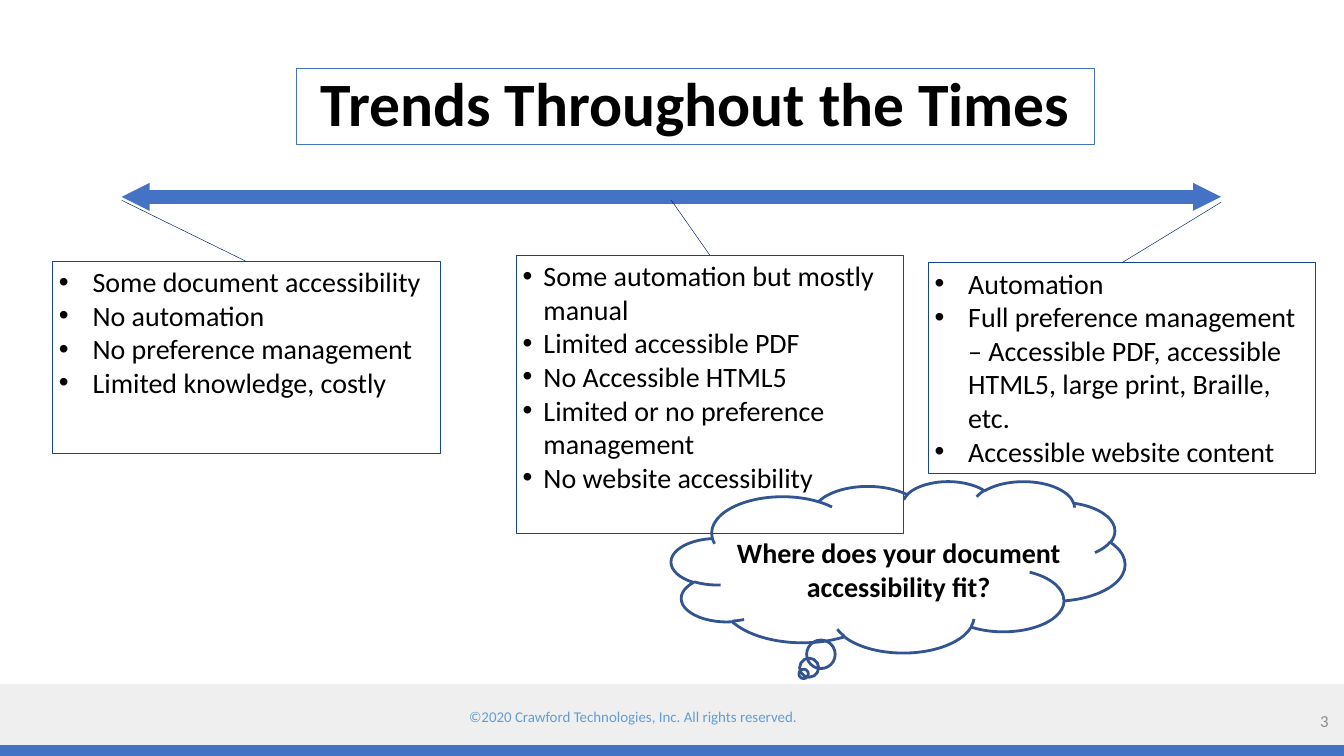
import pptx
import pptx.util
import pptx.dml.color
import pptx.enum.shapes
import pptx.enum.text
import pptx.oxml.ns
import lxml.etree

SHAPE = pptx.enum.shapes.MSO_SHAPE
ALIGN = pptx.enum.text.PP_ALIGN
ANCHOR = pptx.enum.text.MSO_ANCHOR
STRAIGHT = pptx.enum.shapes.MSO_CONNECTOR.STRAIGHT
qn = pptx.oxml.ns.qn


def color(hex_code):
    return pptx.dml.color.RGBColor.from_string(hex_code)


def write(paragraph, words, size, hex_code="000000", bold=False, align=None):
    paragraph.alignment = align
    run = paragraph.add_run()
    run.text = words
    run.font.name = "Calibri"
    run.font.size = pptx.util.Pt(size)
    run.font.bold = bold
    run.font.color.rgb = color(hex_code)


deck = pptx.Presentation()
deck.slide_width = pptx.util.Inches(20)
deck.slide_height = pptx.util.Inches(11.25)
slide = deck.slides.add_slide(deck.slide_layouts[5])

# Lengths are percentages of the slide's width (col) and height (row)
col = deck.slide_width / 100
row = deck.slide_height / 100

# Footer band and blue strip
for top, fill, alpha in [(90.49, "D9D9D9", 40), (98.58, "4472C4", 100)]:
    band = slide.shapes.add_shape(SHAPE.RECTANGLE, 0, int(top * row),
                                  deck.slide_width, int((100 - top) * row))
    band.shadow.inherit = False
    band.fill.solid()
    band.fill.fore_color.rgb = color(fill)
    band.line.fill.background()
    if alpha < 100:
        tint = band.fill._xPr.find(qn("a:solidFill"))[0]
        lxml.etree.SubElement(tint, qn("a:alpha")).set("val", str(alpha * 1000))

# Copyright line and page number
copyright_line = slide.shapes.add_textbox(int(29.8 * col), int(93.6 * row),
                                          int(34.6 * col), int(2.84 * row))
copyright_line.text_frame.word_wrap = True
copyright_line.text_frame.paragraphs[0].line_spacing = 0.8
write(copyright_line.text_frame.paragraphs[0],
      "©2020 Crawford Technologies, Inc. All rights reserved.",
      16, "629DD1", align=ALIGN.CENTER)

page_number = slide.shapes.add_textbox(int(96.5 * col), int(92.71 * row),
                                       int(3.1 * col), int(5.33 * row))
page_number.text_frame.word_wrap = True
page_number.text_frame.vertical_anchor = ANCHOR.MIDDLE
page_number.text_frame.margin_left = pptx.util.Inches(0.15)
page_number.text_frame.margin_right = pptx.util.Inches(0.15)
write(page_number.text_frame.paragraphs[0], "3", 18, "8C8C8C", align=ALIGN.RIGHT)

# Title
title = slide.shapes.title
title.left, title.top = int(22.05 * col), int(8.98 * row)
title.width, title.height = int(59.4 * col), int(10.13 * row)
title.line.color.rgb = color("4472C4")
title.line.width = pptx.util.Pt(0.75)
title.text_frame.auto_size = pptx.enum.text.MSO_AUTO_SIZE.NONE
title.text_frame.vertical_anchor = ANCHOR.MIDDLE
title.text_frame.paragraphs[0].line_spacing = 0.9
write(title.text_frame.paragraphs[0], "Trends Throughout the Times",
      66, bold=True, align=ALIGN.CENTER)

# Eras: left, top, height, bullet indent in inches, points
era_width = 28.85
eras = [
    (3.9, 34.58, 25.42, 0.5, [
        "Some document accessibility", "No automation",
        "No preference management", "Limited knowledge, costly"]),
    (38.4, 33.78, 36.8, 0.31, [
        "Some automation but mostly manual", "Limited accessible PDF",
        "No Accessible HTML5", "Limited or no preference management",
        "No website accessibility"]),
    (69.05, 34.76, 27.82, 0.5, [
        "Automation",
        "Full preference management – Accessible PDF, accessible HTML5, "
        "large print, Braille, etc.",
        "Accessible website content"]),
]
for left, top, height, indent, points in eras:
    era = slide.shapes.add_shape(SHAPE.RECTANGLE, int(left * col), int(top * row),
                                 int(era_width * col), int(height * row))
    era.shadow.inherit = False
    era.fill.background()
    era.line.color.rgb = color("144592")
    era.line.width = pptx.util.Pt(0.75)
    era.text_frame.word_wrap = True
    era.text_frame.vertical_anchor = ANCHOR.TOP
    for i, point in enumerate(points):
        paragraph = era.text_frame.add_paragraph() if i else era.text_frame.paragraphs[0]
        properties = paragraph._p.get_or_add_pPr()
        properties.set("marL", str(pptx.util.Inches(indent)))
        properties.set("indent", str(-pptx.util.Inches(indent)))
        lxml.etree.SubElement(properties, qn("a:buFont")).set("typeface", "Arial")
        lxml.etree.SubElement(properties, qn("a:buChar")).set("char", "•")
        write(paragraph, point, 30, align=ALIGN.LEFT)

# Timeline, then a pointer from it to the top centre of each era
time_start, time_end = 9.05, 90.85
time_middle = (time_start + time_end) / 2
lines = [(time_start, 26.04, time_end, 26.04, "4472C4", 15)]
for origin, drop, (left, top, *_) in zip((time_start, time_middle, time_end),
                                         (26.49, 26.49, 26.76), eras):
    lines.append((origin, drop, left + era_width / 2, top, "042066", 0.5))
for x1, y1, x2, y2, stroke, weight in lines:
    line = slide.shapes.add_connector(STRAIGHT, int(x1 * col), int(y1 * row),
                                      int(x2 * col), int(y2 * row))
    line.line.color.rgb = color(stroke)
    line.line.width = pptx.util.Pt(weight)
    if weight == 15:
        for end in ("a:headEnd", "a:tailEnd"):
            arrowhead = lxml.etree.SubElement(line.line._get_or_add_ln(), qn(end))
            arrowhead.set("type", "triangle")
            arrowhead.set("w", "sm")
            arrowhead.set("len", "sm")
    lxml.etree.SubElement(line._element.spPr, qn("a:effectLst"))

# Thought cloud with its question
cloud = slide.shapes.add_shape(SHAPE.CLOUD_CALLOUT, int(time_middle * col), int(63.64 * row),
                               int(33.75 * col), int(22.67 * row))
cloud.shadow.inherit = False
cloud.fill.background()
cloud.line.color.rgb = color("325491")
cloud.line.width = pptx.util.Pt(3)

question = slide.shapes.add_textbox(int(52.55 * col), int(70.4 * row),
                                    int(28.65 * col), int(8.44 * row))
question.text_frame.word_wrap = True
write(question.text_frame.paragraphs[0], "Where does your document accessibility fit?",
      30, bold=True, align=ALIGN.CENTER)

deck.save("out.pptx")
